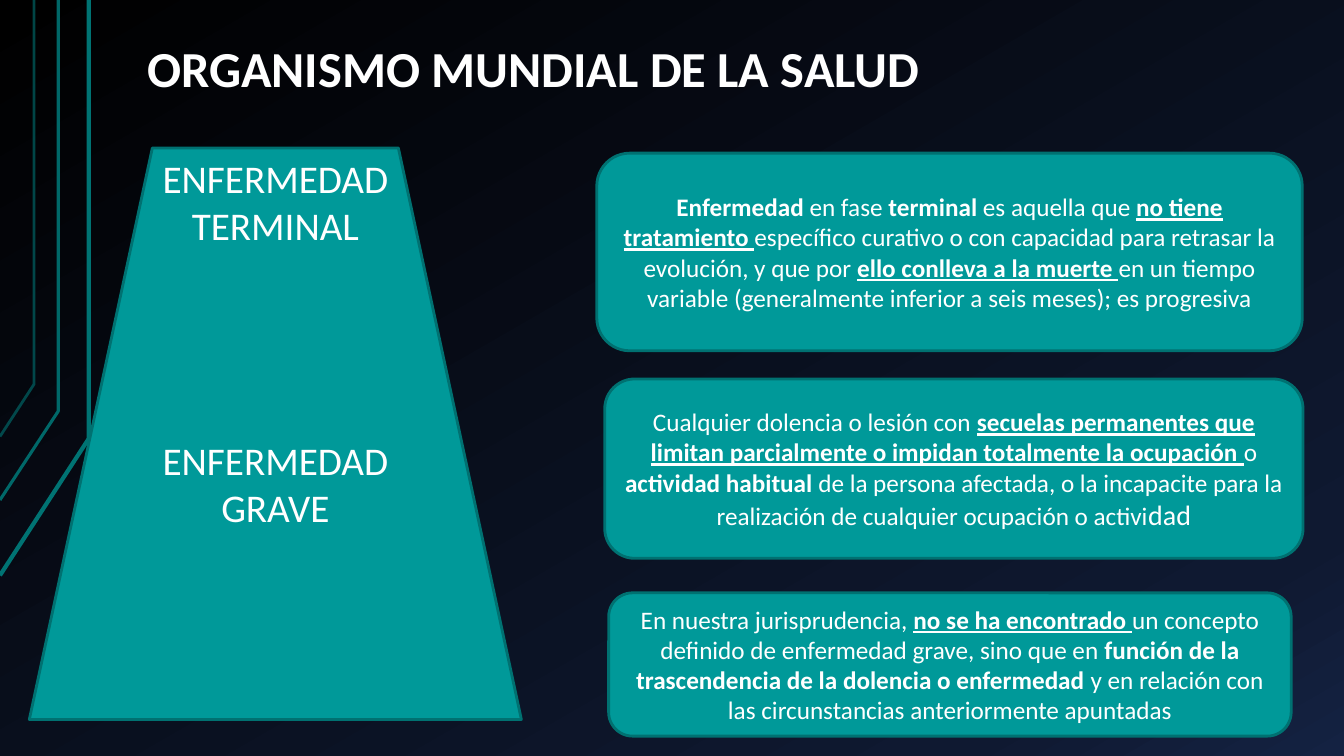
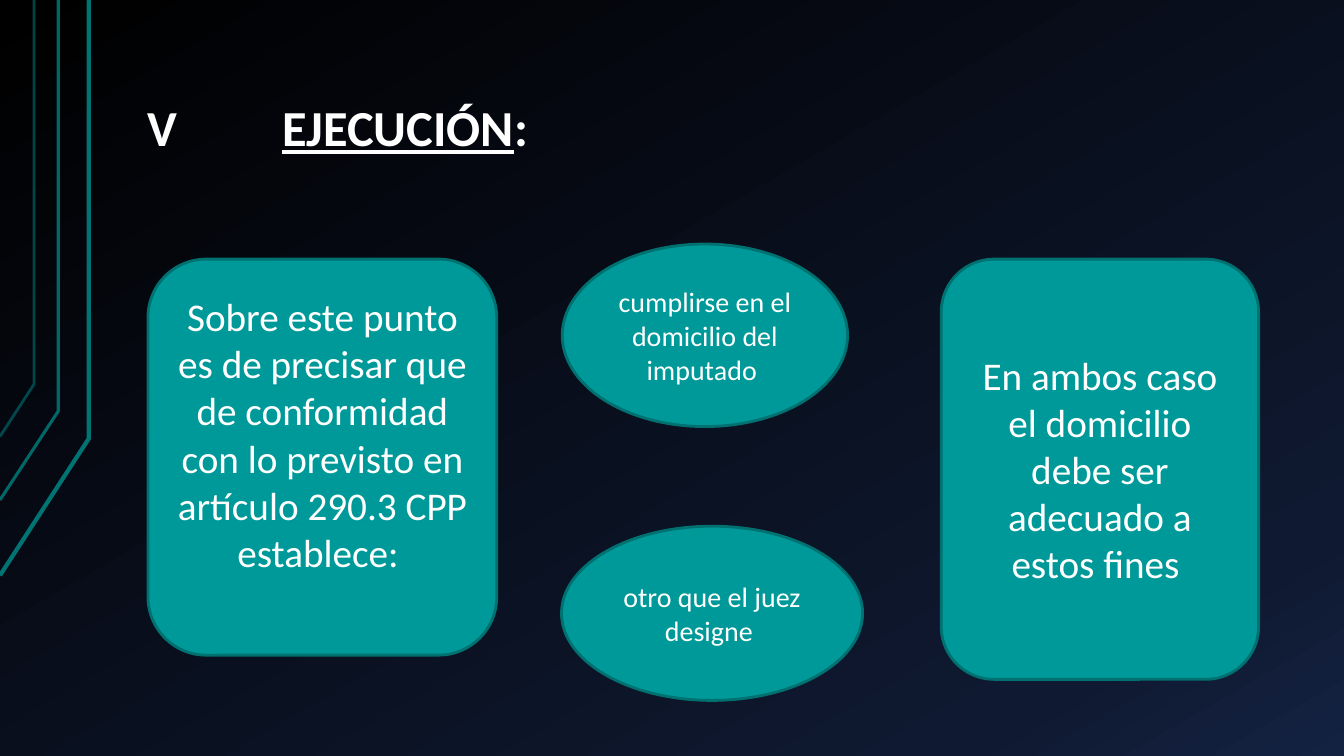
"""Two slides on serious illness and the enforcement of house arrest."""
from copy import deepcopy
from dataclasses import dataclass

from lxml.etree import SubElement
from pptx import Presentation
from pptx.dml.color import RGBColor as RGB
from pptx.enum.shapes import MSO_SHAPE as SHAPE
from pptx.enum.text import MSO_ANCHOR as ANCHOR, PP_ALIGN as ALIGN
from pptx.oxml.ns import qn
from pptx.util import Cm, Pt


@dataclass(frozen=True)
class Theme:
    font: str = "Calibri"
    text: str = "FFFFFF"
    fill: str = "009999"
    edge: str = "007171"
    rail: str = "007373"
    backdrop: tuple = ((0, "000000"), (0.85, "0F1931"), (1, "142242"))
    title: int = 36
    large: int = 28
    medium: int = 20
    small: int = 18
    edge_width: float = 2


T = Theme()
STYLES = {
    "": {},
    "b": {"bold": True},
    "bu": {"bold": True, "underline": True},
    "big": {"size": Pt(T.medium)},
}


def write(sp, runs, size, align=ALIGN.CENTER, anchor=ANCHOR.MIDDLE, style=""):
    tf = sp.text_frame
    for name, value in {"word_wrap": True, "vertical_anchor": anchor}.items():
        setattr(tf, name, value)
    p = tf.paragraphs[0]
    p.alignment = align
    for text, mark in runs:
        r = p.add_run()
        r.text = text
        font = {"name": T.font, "size": Pt(size), **STYLES[style], **STYLES[mark]}
        for name, value in font.items():
            setattr(r.font, name, value)
        r.font.color.rgb = RGB.from_string(T.text)
    return tf


def add_panel(s, kind, box):
    sp = s.shapes.add_shape(kind, *map(Cm, box))
    sp.shadow.inherit = False
    sp.fill.solid()
    sp.fill.fore_color.rgb = RGB.from_string(T.fill)
    sp.line.color.rgb = RGB.from_string(T.edge)
    sp.line.width = Pt(T.edge_width)
    return sp


prs = Presentation()
prs.slide_width, prs.slide_height = Cm(33.87), Cm(19.05)

master = prs.slide_master
fill = master.background.fill
fill.gradient()
fill.gradient_angle = 300
stops = master.element.find(".//" + qn("a:gsLst"))
stops.append(deepcopy(stops[-1]))
for stop, (position, color) in zip(fill.gradient_stops, T.backdrop):
    stop.position = position
    stop.color.rgb = RGB.from_string(color)

RAILS = [
    (2.24, 11.05, 14.5, 3, 100),
    (1.47, 10.36, 12.6, 2.25, 90),
    (0.86, 9.68, 11, 2, 60),
]
TITLES = [
    ([("ORGANISMO MUNDIAL DE LA SALUD", "")], 1.9),
    ([("V\t", ""), ("EJECUCIÓN", "bu"), (":", "")], 3.4),
]
slides = []
for runs, height in TITLES:
    s = prs.slides.add_slide(prs.slide_layouts[6])
    slides.append(s)
    for x, bend, end, width, opacity in RAILS:
        path = s.shapes.build_freeform(0, Cm(end))
        path.add_line_segments([(Cm(x), Cm(bend)), (Cm(x), 0)], close=False)
        sp = path.convert_to_shape()
        sp.shadow.inherit = False
        sp.fill.background()
        sp.line.color.rgb = RGB.from_string(T.rail)
        sp.line.width = Pt(width)
        color = sp.line._ln.find(".//" + qn("a:srgbClr"))
        SubElement(color, qn("a:alpha"), val=str(opacity * 1000))
    sp = s.shapes.add_textbox(Cm(3.38), Cm(0.76), Cm(28.78), Cm(height))
    tf = write(sp, runs, T.title, ALIGN.LEFT, ANCHOR.BOTTOM, "b")
    margins = {"left": 0.33, "right": 0.33, "top": 0.18, "bottom": 0.18}
    for side, value in margins.items():
        setattr(tf, "margin_" + side, Cm(value))
    p = tf.paragraphs[0]
    p.line_spacing = 0.9
    tabs = SubElement(p._p.get_or_add_pPr(), qn("a:tabLst"))
    SubElement(tabs, qn("a:tab"), pos=str(Cm(3.4)), algn="l")

illness, enforcement = slides

add_panel(illness, SHAPE.TRAPEZOID, (0.74, 3.73, 12.4, 14.4))
for top, text in [(3.68, "ENFERMEDAD TERMINAL"), (10.79, "ENFERMEDAD GRAVE")]:
    sp = illness.shapes.add_textbox(Cm(3.34), Cm(top), Cm(7.2), Cm(2.8))
    write(sp, [(text, "")], T.large)

DEFINITIONS = [
    ((15.04, 3.86, 17.78, 4.98), [
        ("Enfermedad", "b"),
        (" en fase ", ""),
        ("terminal", "b"),
        (" es aquella que ", ""),
        ("no tiene tratamiento ", "bu"),
        ("específico curativo o con capacidad para retrasar la evolución, "
         "y que por ", ""),
        ("ello conlleva a la muerte ", "bu"),
        ("en un tiempo variable (generalmente inferior a seis meses); "
         "es progresiva", ""),
    ]),
    ((15.24, 9.55, 17.6, 4.52), [
        ("Cualquier dolencia o lesión con ", ""),
        ("secuelas permanentes que limitan parcialmente o impidan "
         "totalmente la ocupación ", "bu"),
        ("o ", ""),
        ("actividad habitual ", "b"),
        ("de la persona afectada, o la incapacite para la realización de "
         "cualquier ocupación o activi", ""),
        ("dad", "big"),
    ]),
    ((15.34, 14.94, 17.2, 3.61), [
        ("En nuestra jurisprudencia, ", ""),
        ("no se ha encontrado ", "bu"),
        ("un concepto definido de enfermedad grave, sino que en ", ""),
        ("función de la trascendencia de la dolencia o enfermedad ", "b"),
        ("y en relación con las circunstancias anteriormente apuntadas", ""),
    ]),
]
for box, runs in DEFINITIONS:
    write(add_panel(illness, SHAPE.ROUNDED_RECTANGLE, box), runs, T.small)

STEPS = [
    (SHAPE.OVAL, (14.17, 6.15, 7.19, 4.6), T.medium, 0.13,
     "cumplirse en el domicilio del imputado "),
    (SHAPE.OVAL, (14.15, 13.26, 7.59, 4.39), T.medium, 0.13,
     "otro que el juez designe "),
    (SHAPE.ROUNDED_RECTANGLE, (3.73, 6.53, 8.79, 9.98), T.large, 1.3,
     "Sobre este punto es de precisar que de conformidad con lo previsto "
     "en artículo 290.3 CPP establece: "),
    (SHAPE.ROUNDED_RECTANGLE, (23.72, 6.53, 8, 10.59), T.large, 0.13,
     "En ambos caso el domicilio debe ser adecuado a estos fines "),
]
for kind, box, size, bottom, text in STEPS:
    tf = write(add_panel(enforcement, kind, box), [(text, "")], size)
    tf.margin_bottom = Cm(bottom)

prs.save("out.pptx")
